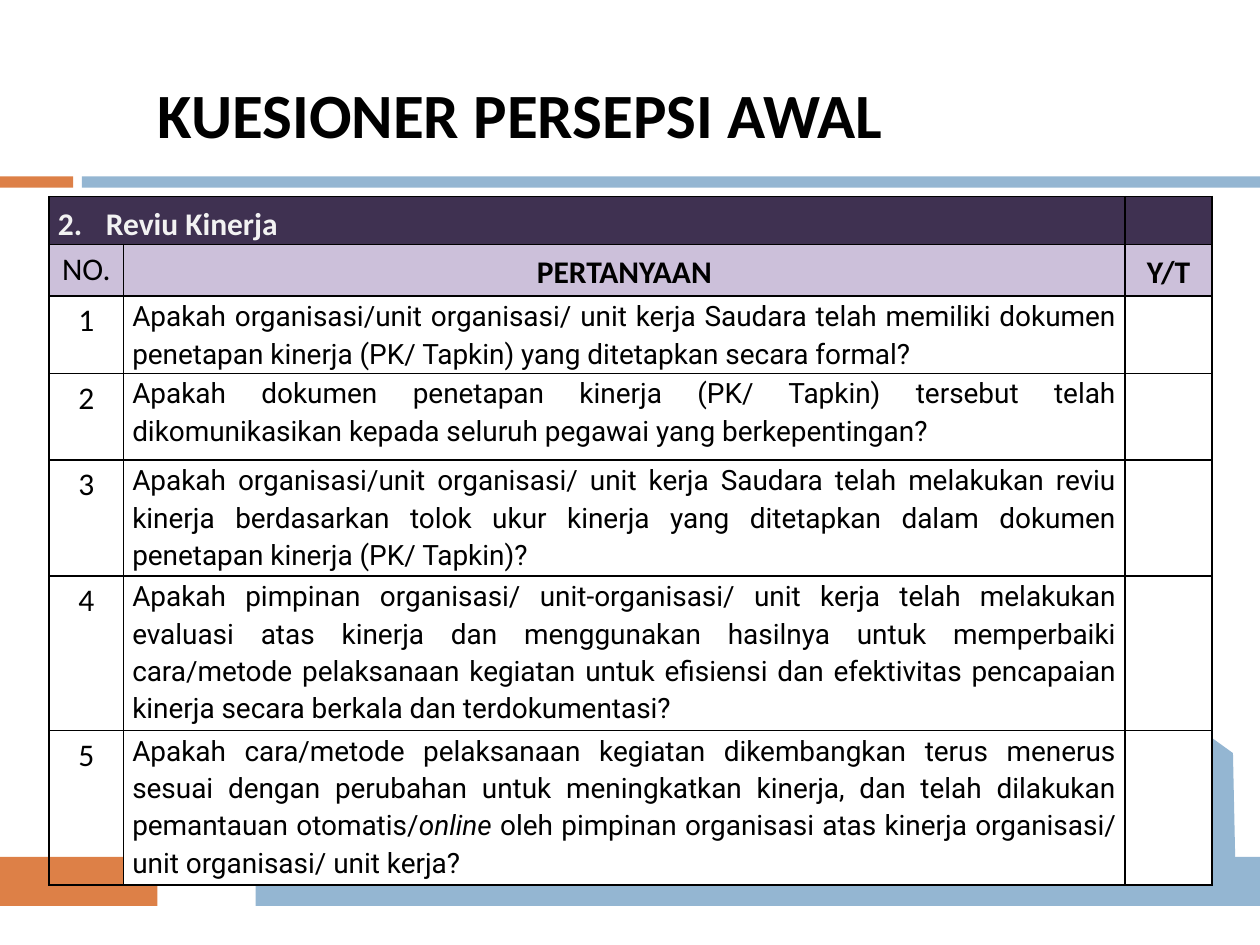
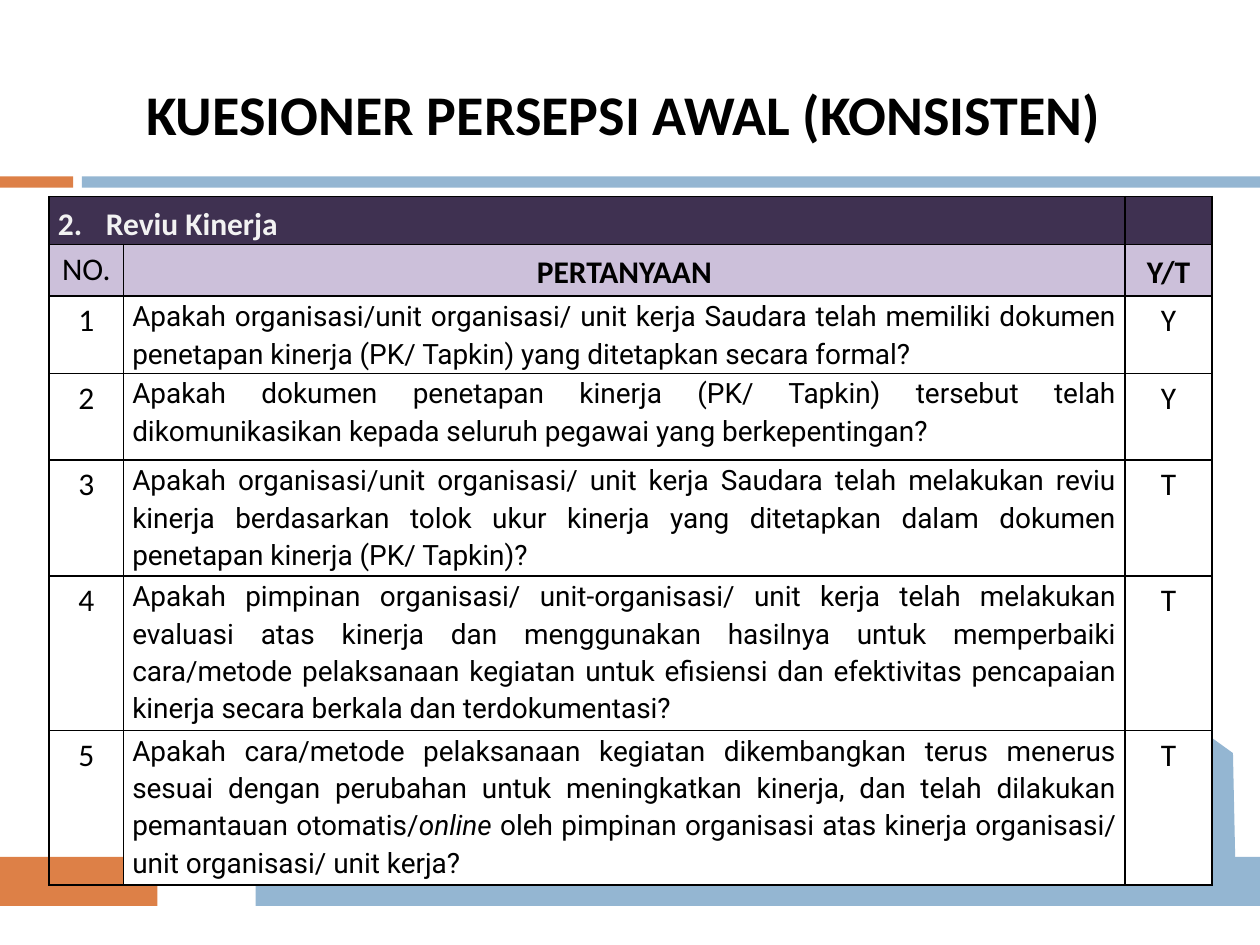
from lxml.etree import SubElement
from pptx import Presentation
from pptx.dml.color import RGBColor as RGB
from pptx.enum.shapes import MSO_SHAPE
from pptx.enum.text import MSO_ANCHOR as ANCHOR, PP_ALIGN as ALIGN
from pptx.oxml import parse_xml
from pptx.oxml.ns import nsdecls, qn
from pptx.util import Inches, Pt


class Theme:
    orange = RGB.from_string("DD8047")
    blue = RGB.from_string("94B6D2")
    plum = RGB.from_string("3F3151")
    lilac = RGB.from_string("CCC0DA")
    pale = RGB.from_string("F2F2F2")
    white = RGB.from_string("FFFFFF")
    black = RGB.from_string("000000")
    heading_font, question_font = "Calibri", "Roboto"
    label_size, question_size = 18, 16
    line_spacing = 1.15


deck = Presentation()
deck.slide_width, deck.slide_height = Inches(10), Inches(7.5)

# Grid: 100 columns by 75 rows
COL, ROW = deck.slide_width / 100, deck.slide_height / 75


def add_block(slide, left, top, width, height, color):
    block = slide.shapes.add_shape(MSO_SHAPE.RECTANGLE, int(left * COL), int(top * ROW),
                                   int(width * COL), int(height * ROW))
    block.shadow.inherit = False
    block.fill.solid()
    block.fill.fore_color.rgb = color
    block.line.fill.background()


def write(frame, parts, align, size, font=Theme.heading_font, color=Theme.black,
          bold=False, spacing=Theme.line_spacing):
    """Fill the first paragraph; every second part is italic."""
    line = frame.paragraphs[0]
    line.alignment, line.line_spacing = align, spacing
    line.font.size, line.font.name, line.font.bold = Pt(size), font, bold
    line.font.color.rgb = color
    for index, part in enumerate(parts):
        run = line.add_run()
        run.text = part
        if index % 2:
            run.font.italic = True
    return line


# Shared content
bands = [
    (0, 14, 5.8, 0.9, Theme.orange), (6.5, 14, 93.5, 0.9, Theme.blue),
    (20.3, 68, 79.7, 3.9, Theme.blue), (0, 68, 12.5, 3.9, Theme.orange),
]
# Skyline outline in tenths of a grid cell
skyline = [
    (555, 685), (555, 666), (567, 665), (568, 675), (575, 675), (575, 657), (582, 654),
    (597, 654), (598, 660), (605, 658), (605, 665), (644, 665), (644, 631), (663, 625),
    (663, 675), (671, 674), (671, 661), (687, 656), (700, 655), (700, 682), (714, 683),
    (714, 604), (750, 604), (758, 616), (758, 643), (781, 643), (781, 655), (820, 655),
    (819, 644), (849, 644), (849, 677), (857, 676), (864, 666), (866, 648), (887, 648),
    (887, 681), (897, 681), (900, 580), (953, 580), (978, 598), (980, 692), (555, 694),
]
windows = [(72.9, 61.1 + 1.7 * floor, 0.5) for floor in range(3)]
windows += [(92.5, 59.7, 0.5), (94.1, 59.7, 0.5), (94.1, 61.2, 0.5), (79.5, 63.1, 0.8)]

questions = [
    ["Apakah organisasi/unit organisasi/ unit kerja Saudara telah memiliki dokumen "
     "penetapan kinerja (PK/ Tapkin) yang ditetapkan secara formal?"],
    ["Apakah dokumen penetapan kinerja (PK/ Tapkin) tersebut telah dikomunikasikan "
     "kepada seluruh pegawai yang berkepentingan?"],
    ["Apakah organisasi/unit organisasi/ unit kerja Saudara telah melakukan reviu kinerja "
     "berdasarkan tolok ukur kinerja yang ditetapkan dalam dokumen penetapan kinerja "
     "(PK/ Tapkin)?"],
    ["Apakah pimpinan organisasi/ unit-organisasi/ unit kerja telah melakukan evaluasi atas "
     "kinerja dan menggunakan hasilnya untuk memperbaiki cara/metode pelaksanaan kegiatan "
     "untuk efisiensi dan efektivitas pencapaian kinerja secara berkala dan "
     "terdokumentasi?"],
    ["Apakah cara/metode pelaksanaan kegiatan dikembangkan terus menerus sesuai dengan "
     "perubahan untuk meningkatkan kinerja, dan telah dilakukan pemantauan otomatis/",
     "online",
     " oleh pimpinan organisasi atas kinerja organisasi/ unit organisasi/ unit kerja?"],
]
column_widths = [5.9, 79.5, 6.9]
row_heights = [3.8, 4.1, 5.9, 6.9, 8.9, 11.9, 11.9]

# Title, its size, left and width, then the answers
pages = [
    ("KUESIONER PERSEPSI AWAL ", 36, 0.2, 83.3, [""] * 5),
    ("KUESIONER PERSEPSI AWAL (KONSISTEN) ", 32, 0, 100, ["Y", "Y", "T", "T", "T"]),
]

for title, title_size, title_left, title_width, answers in pages:
    slide = deck.slides.add_slide(deck.slide_layouts[6])

    # Bands and skyline
    for band in bands:
        add_block(slide, *band)
    builder = slide.shapes.build_freeform(*skyline[0], scale=COL / 10)
    builder.add_line_segments(skyline[1:], close=True)
    city = builder.convert_to_shape()
    city.shadow.inherit = False
    city.fill.solid()
    city.fill.fore_color.rgb = city.line.color.rgb = Theme.blue
    city.line.width = Pt(0.79)
    for left, top, height in windows:
        add_block(slide, left, top, 0.8, height, Theme.white)

    # Title
    heading = slide.shapes.add_textbox(int(title_left * COL), int(3.6 * ROW),
                                       int(title_width * COL), int(10.8 * ROW)).text_frame
    heading.word_wrap = True
    heading.vertical_anchor = ANCHOR.MIDDLE
    write(heading, [title], ALIGN.CENTER, title_size, bold=True, spacing=1)

    # Questionnaire grid
    form = slide.shapes.add_table(
        len(row_heights), len(column_widths), int(3.9 * COL), int(15.6 * ROW),
        int(sum(column_widths) * COL), int(sum(row_heights) * ROW)).table
    form.first_row = form.horz_banding = False
    form._tbl.tblPr.find(qn("a:tableStyleId")).text = "{2D5ABB26-0587-4C30-8999-92F81FD0307C}"
    for column, width in zip(form.columns, column_widths):
        column.width = int(width * COL)
    for row, height in zip(form.rows, row_heights):
        row.height = int(height * ROW)
    form.cell(0, 0).merge(form.cell(0, 1))

    # Fills, margins and borders
    for row_index, row in enumerate(form.rows):
        for column_index, cell in enumerate(row.cells):
            cell.margin_left = cell.margin_right = int(0.7 * COL)
            cell.margin_top = cell.margin_bottom = 0
            if row_index > 1 and column_index == 0:
                cell.fill.background()
            else:
                cell.fill.solid()
                cell.fill.fore_color.rgb = (
                    [Theme.plum, Theme.lilac][row_index] if row_index < 2 else Theme.white)
            properties = cell._tc.get_or_add_tcPr()
            for place, side in enumerate("LRTB"):
                border = parse_xml(f'<a:ln{side} {nsdecls("a")} w="{Pt(1)}"/>')
                ink = SubElement(border, qn("a:solidFill"))
                SubElement(ink, qn("a:srgbClr")).set("val", str(Theme.black))
                properties.insert(place, border)

    # Section and column headings
    section = form.cell(0, 0)
    section.vertical_anchor = ANCHOR.BOTTOM
    section_line = write(section.text_frame, ["2.\tReviu Kinerja"], ALIGN.LEFT,
                         Theme.label_size, color=Theme.pale, bold=True)
    hanging = int(3.8 * COL)
    section_line._p.get_or_add_pPr().set("marL", str(hanging))
    section_line._p.get_or_add_pPr().set("indent", str(-hanging))
    for column_index, label in enumerate(["NO.", "PERTANYAAN", "Y/T"]):
        cell = form.cell(1, column_index)
        cell.vertical_anchor = ANCHOR.MIDDLE if column_index else ANCHOR.TOP
        write(cell.text_frame, [label], ALIGN.CENTER, Theme.label_size,
              bold=column_index > 0)

    # Questions and answers
    for number, (question, answer) in enumerate(zip(questions, answers), 1):
        number_cell, question_cell, answer_cell = form.rows[number + 1].cells
        write(number_cell.text_frame, [str(number)], ALIGN.CENTER, Theme.label_size)
        write(question_cell.text_frame, question, ALIGN.JUSTIFY, Theme.question_size,
              font=Theme.question_font)
        if answer:
            write(answer_cell.text_frame, [answer], ALIGN.CENTER, Theme.label_size)

deck.save("out.pptx")
